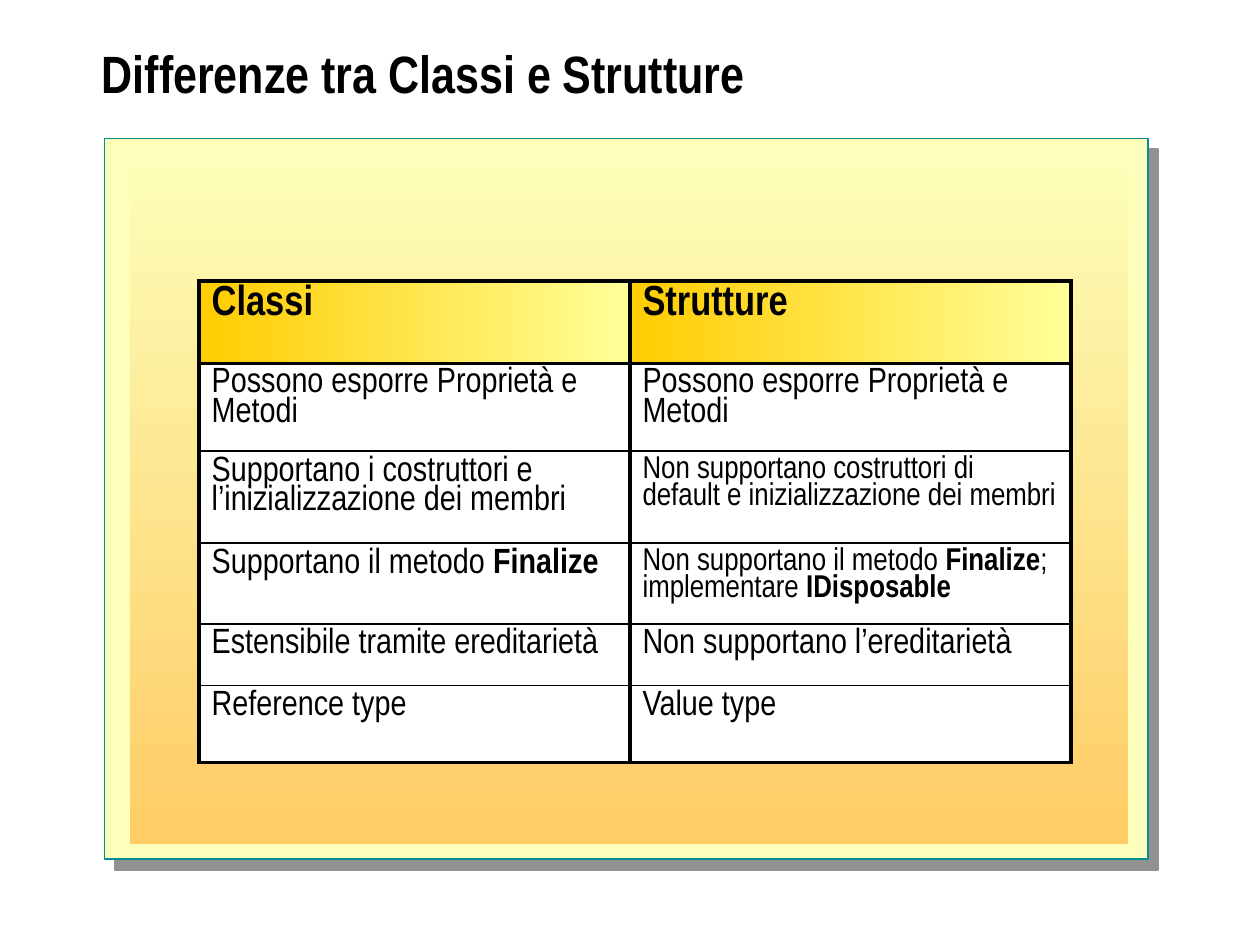
from lxml.etree import SubElement
from pptx import Presentation
from pptx.dml.color import RGBColor
from pptx.enum.shapes import MSO_SHAPE
from pptx.enum.text import MSO_ANCHOR
from pptx.oxml import parse_xml
from pptx.oxml.ns import nsdecls, qn
from pptx.util import Inches, Pt

BLACK = RGBColor(0x00, 0x00, 0x00)
WHITE = RGBColor(0xFF, 0xFF, 0xFF)
TEAL = RGBColor(0x00, 0x90, 0x94)
GRAY = RGBColor(0x91, 0x91, 0x91)
CREAM = RGBColor(0xFC, 0xFE, 0xB9)
ORANGE = RGBColor(0xFF, 0xCC, 0x66)
GOLD = RGBColor(0xFF, 0xCC, 0x00)
YELLOW = RGBColor(0xFF, 0xFF, 0x99)
FONT = "Arial Narrow"

LEFT, TOP = 1.58, 2.23
COLS = [3.42, 3.5]
ROWS = [0.65, 0.56, 0.73, 0.54, 0.49, 0.61]
CELLS = [
    [(24, [("Classi", True)]), (24, [("Strutture", True)])],
    [(20, [("Possono esporre Proprietà e Metodi", False)])] * 2,
    [(20, [("Supportano i costruttori e l’inizializzazione dei membri", False)]),
     (18, [("Non supportano costruttori di default e inizializzazione dei membri", False)])],
    [(20, [("Supportano il metodo ", False), ("Finalize", True)]),
     (18, [("Non supportano il metodo ", False), ("Finalize", True),
           ("; implementare ", False), ("IDisposable", True)])],
    [(20, [("Estensibile tramite ereditarietà", False)]),
     (20, [("Non supportano l’ereditarietà", False)])],
    [(20, [("Reference type", False)]), (20, [("Value type", False)])],
]


def add_rect(slide, box, colors, angle=0, line=None, width=0.75):
    """Add a rectangle with a solid or two-colour gradient fill."""
    sp = slide.shapes.add_shape(MSO_SHAPE.RECTANGLE, *map(Inches, box))
    sp.shadow.inherit = False
    if len(colors) == 1:
        sp.fill.solid()
        sp.fill.fore_color.rgb = colors[0]
    else:
        sp.fill.gradient()
        sp.fill.gradient_angle = angle
        for stop, color in zip(sp.fill.gradient_stops, colors):
            stop.color.rgb = color
    if line is None:
        sp.line.fill.background()
    else:
        sp.line.color.rgb = line
        sp.line.width = Pt(width)
    return sp


def add_shadow(sp, color, dist):
    """Give a shape a hard shadow towards the lower right."""
    effects = sp._element.spPr.find(qn("a:effectLst"))
    shadow = SubElement(effects, qn("a:outerShdw"), blurRad="0", dist=str(Pt(dist)),
                        dir="2700000", algn="ctr", rotWithShape="0")
    SubElement(shadow, qn("a:srgbClr"), val=str(color))


def write_runs(tf, runs, size, spacing):
    """Write (text, bold) runs into the first paragraph of a text frame."""
    tf.word_wrap = True
    p = tf.paragraphs[0]
    p.line_spacing = spacing
    for text, bold in runs:
        r = p.add_run()
        r.text = text
        r.font.name = FONT
        r.font.size = Pt(size)
        r.font.bold = bold
        r.font.color.rgb = BLACK


def set_borders(cell, top, bottom):
    """Draw black cell borders, thick at the sides."""
    widths = {"lnL": 2.25, "lnR": 2.25, "lnT": top, "lnB": bottom}
    tc_pr = cell._tc.get_or_add_tcPr()
    for i, (tag, width) in enumerate(widths.items()):
        tc_pr.insert(i, parse_xml(
            f'<a:{tag} {nsdecls("a")} w="{Pt(width)}"><a:solidFill>'
            f'<a:srgbClr val="{BLACK}"/></a:solidFill></a:{tag}>'))


def add_title(slide, text):
    """Add the slide title."""
    sp = slide.shapes.add_textbox(Inches(0.71), Inches(0.16), Inches(8.96), Inches(0.92))
    sp.text_frame.vertical_anchor = MSO_ANCHOR.MIDDLE
    write_runs(sp.text_frame, [(text, True)], 30, 0.8)


def add_comparison(slide):
    """Add the table that compares classes and structures."""
    table = slide.shapes.add_table(len(ROWS), len(COLS), Inches(LEFT), Inches(TOP),
                                   Inches(sum(COLS)), Inches(sum(ROWS))).table
    table.first_row = table.horz_banding = False
    for col, width in zip(table.columns, COLS):
        col.width = Inches(width)
    last = len(ROWS) - 1
    for i, (height, row) in enumerate(zip(ROWS, CELLS)):
        table.rows[i].height = Inches(height)
        for j, (size, runs) in enumerate(row):
            cell = table.cell(i, j)
            cell.fill.background()
            write_runs(cell.text_frame, runs, size, 0.9)
            set_borders(cell, 2.25 if i == 0 else 1, 2.25 if i == last else 1)


def main():
    """Build the slide and save it."""
    prs = Presentation()
    prs.slide_width, prs.slide_height = Inches(10), Inches(7.5)
    slide = prs.slides.add_slide(prs.slide_layouts[6])
    panel = add_rect(slide, (0.83, 1.1, 8.28, 5.72), [CREAM], line=TEAL, width=1)
    add_shadow(panel, GRAY, 8.5)
    add_rect(slide, (1.03, 1.22, 7.92, 5.48), [CREAM, ORANGE], angle=270)
    add_rect(slide, (1.57, 2.89, sum(COLS), 3.17), [WHITE], line=BLACK)
    for left, width in zip((1.57, 1.57 + COLS[0]), COLS):
        add_rect(slide, (left, 2.22, width, 0.67), [GOLD, YELLOW], line=BLACK)
    add_title(slide, "Differenze tra Classi e Strutture")
    add_comparison(slide)
    prs.save("out.pptx")


if __name__ == "__main__":
    main()
